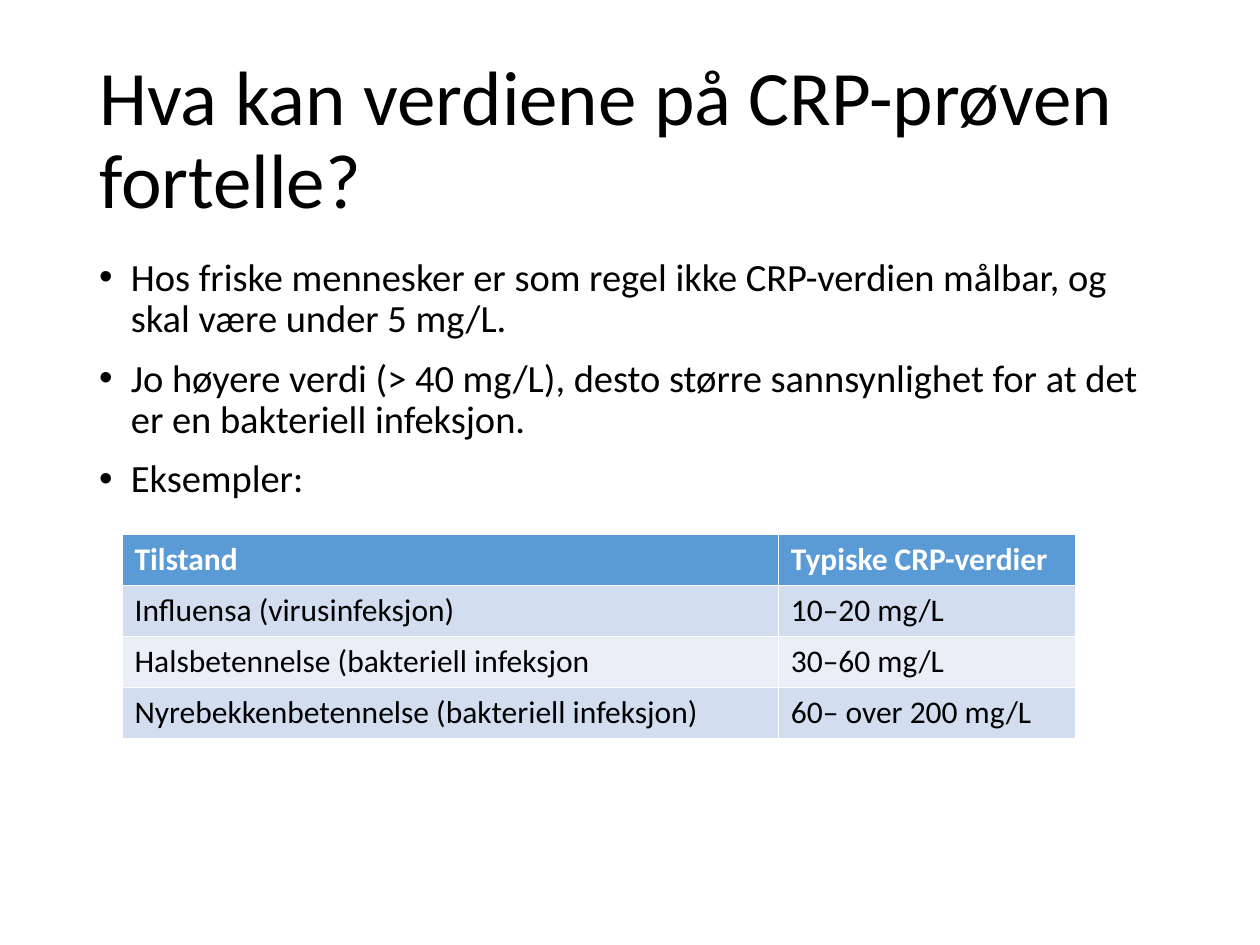
from dataclasses import dataclass

from lxml import etree
from pptx import Presentation
from pptx.dml.color import RGBColor
from pptx.enum.text import MSO_ANCHOR
from pptx.oxml.ns import qn
from pptx.util import Cm, Pt

TOP, MIDDLE = MSO_ANCHOR.TOP, MSO_ANCHOR.MIDDLE


@dataclass(frozen=True)
class Theme:
    font: str = "Calibri"
    text: str = "000000"
    header_text: str = "FFFFFF"
    header_fill: str = "5B9BD5"
    bands: tuple = ("D2DEEF", "EAEFF7")
    title_size: int = 44
    body_size: int = 22
    table_size: int = 18


class SlideBuilder:
    """Draws styled titles, bullet lists and tables on one slide."""

    def __init__(self, s, theme):
        self.s = s
        self.theme = theme

    def format_runs(self, p, size, color, bold=False):
        for r in p.runs:
            r.font.name = self.theme.font
            r.font.size = Pt(size)
            r.font.bold = bold
            r.font.color.rgb = RGBColor.from_string(color)

    def text_box(self, text, left, top, width, height, size, anchor):
        sp = self.s.shapes.add_textbox(Cm(left), Cm(top), Cm(width), Cm(height))
        tf = sp.text_frame
        tf.word_wrap = True
        tf.vertical_anchor = anchor
        tf.text = text
        for p in tf.paragraphs:
            p.line_spacing = 0.9
            self.format_runs(p, size, self.theme.text)
        return tf

    def title(self, text, left, top, width, height):
        self.text_box(text, left, top, width, height, self.theme.title_size, MIDDLE)

    def bullets(self, items, left, top, width, height):
        tf = self.text_box("\n".join(items), left, top, width, height,
                           self.theme.body_size, TOP)
        indent = Cm(0.64)
        for p in tf.paragraphs:
            p.space_before = Pt(10)
            pPr = p._p.get_or_add_pPr()
            pPr.set("marL", str(indent))
            pPr.set("indent", str(-indent))
            etree.SubElement(pPr, qn("a:buFont"), typeface="Arial")
            etree.SubElement(pPr, qn("a:buChar"), char="•")

    def table(self, rows, left, top, col_widths, row_height):
        th = self.theme
        table = self.s.shapes.add_table(
            len(rows), len(col_widths), Cm(left), Cm(top),
            Cm(sum(col_widths)), Cm(row_height * len(rows))).table
        for col, width in zip(table.columns, col_widths):
            col.width = Cm(width)
        for i, values in enumerate(rows):
            header = i == 0
            fill = th.header_fill if header else th.bands[(i - 1) % 2]
            color = th.header_text if header else th.text
            for j, value in enumerate(values):
                cell = table.cell(i, j)
                cell.fill.solid()
                cell.fill.fore_color.rgb = RGBColor.from_string(fill)
                cell.text = value
                self.format_runs(cell.text_frame.paragraphs[0],
                                 th.table_size, color, header)


def main():
    prs = Presentation()
    prs.slide_width, prs.slide_height = Cm(25.4), Cm(19.05)
    slide = SlideBuilder(prs.slides.add_slide(prs.slide_layouts[6]), Theme())

    left, width = 1.75, 21.9
    slide.title("Hva kan verdiene på CRP-prøven fortelle?", left, 1.02, width, 3.68)
    slide.bullets([
        "Hos friske mennesker er som regel ikke CRP-verdien målbar, og skal være under 5 mg/L.",
        "Jo høyere verdi (> 40 mg/L), desto større sannsynlighet for at det er en bakteriell infeksjon.",
        "Eksempler:",
    ], left, 5.08, width, 12.09)
    slide.table([
        ("Tilstand", "Typiske CRP-verdier"),
        ("Influensa (virusinfeksjon)", "10–20 mg/L"),
        ("Halsbetennelse (bakteriell infeksjon", "30–60 mg/L"),
        ("Nyrebekkenbetennelse (bakteriell infeksjon)", "60– over 200 mg/L"),
    ], 2.46, 10.77, (13.23, 5.99), 1.03)

    prs.save("out.pptx")


if __name__ == "__main__":
    main()
